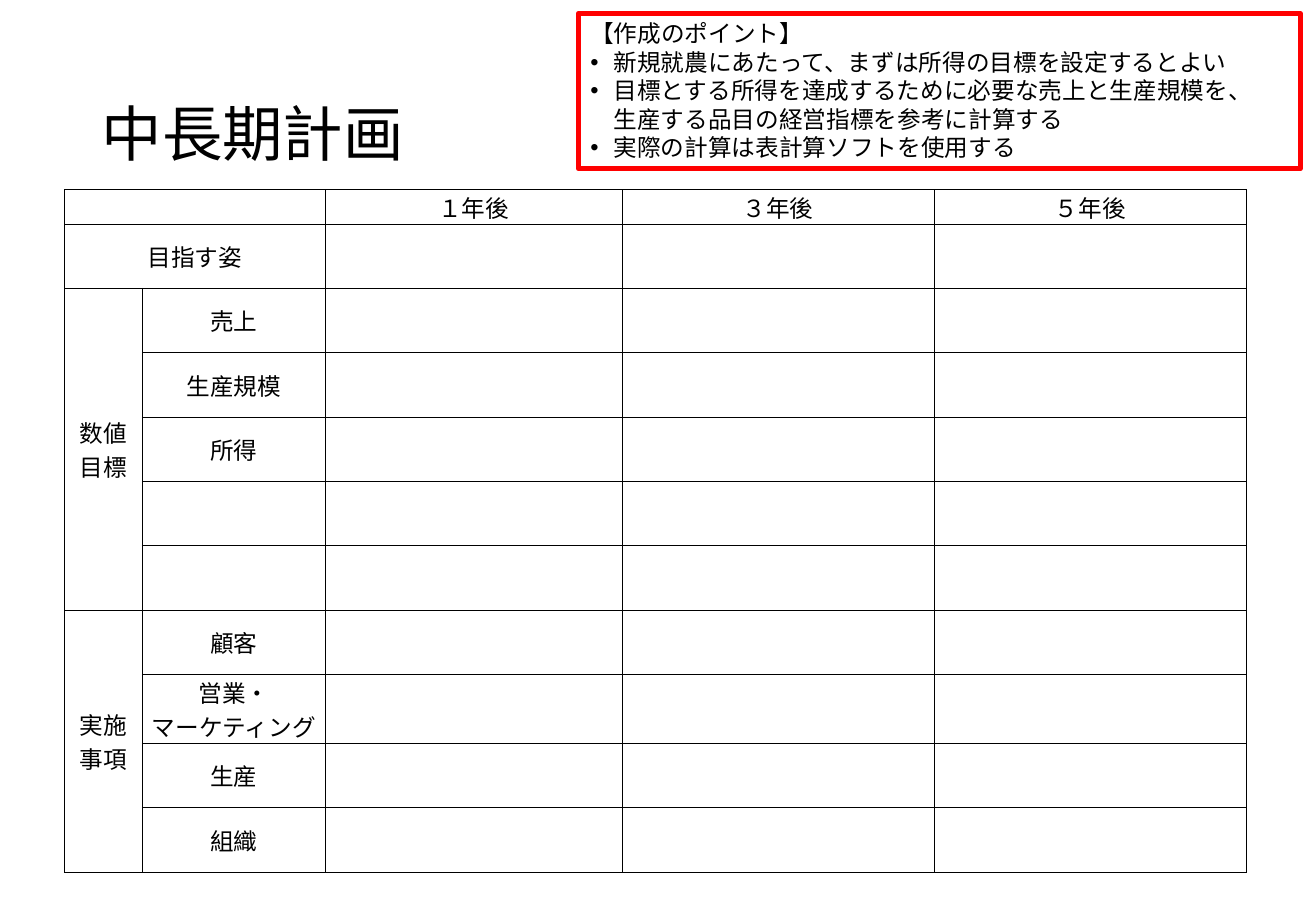
from lxml.etree import SubElement
from pptx import Presentation
from pptx.dml.color import RGBColor
from pptx.enum.shapes import MSO_SHAPE
from pptx.enum.text import MSO_ANCHOR, PP_ALIGN
from pptx.oxml.ns import qn
from pptx.util import Inches, Pt

W, H = 10.83, 7.5
FONT = "Noto Sans CJK JP"
COLORS = {"ink": "000000", "paper": "FFFFFF", "alert": "FF0000"}
COLS = [0.64, 1.51, 2.44, 2.57, 2.57]
ROWS = [0.21] + [0.53] * 10
HEADERS = ["１年後", "３年後", "５年後"]
GROUPS = [
    ("数値\n目標", ["売上", "生産規模", "所得", "", ""]),
    ("実施\n事項", ["顧客", "営業・\nマーケティング", "生産", "組織"]),
]
POINTS = [
    "新規就農にあたって、まずは所得の目標を設定するとよい",
    "目標とする所得を達成するために必要な売上と生産規模を、\n生産する品目の経営指標を参考に計算する",
    "実際の計算は表計算ソフトを使用する",
]


def rgb(name):
    """Return the named colour."""
    return RGBColor.from_string(COLORS[name])


def apply(obj, values):
    """Set attributes of an object from a dict."""
    for name, value in values.items():
        setattr(obj, name, value)


def write(p, text, size, **fmt):
    """Fill a paragraph, sizing its runs, breaks and empty line alike."""
    p.text = text
    apply(p, fmt)
    for r in p.runs:
        apply(r.font, {"size": Pt(size), "name": FONT})
        r.font.color.rgb = rgb("ink")
        SubElement(r.font._element, qn("a:ea"), typeface=FONT)
    marks = [SubElement(br, qn("a:rPr")) for br in p._p.findall(qn("a:br"))]
    if not text:
        marks.append(SubElement(p._p, qn("a:endParaRPr")))
    for mark in marks:
        mark.set("sz", str(int(size * 100)))
        for tag in ("a:latin", "a:ea"):
            SubElement(mark, qn(tag), typeface=FONT)


def add_title(s, box, text):
    """Place the slide title."""
    tf = s.shapes.add_textbox(*map(Inches, box)).text_frame
    apply(tf, {"word_wrap": True, "vertical_anchor": MSO_ANCHOR.MIDDLE})
    write(tf.paragraphs[0], text, 35.8, line_spacing=0.9)


def add_points(s, box, heading, points):
    """Place the framed box of hints with its bullets."""
    sp = s.shapes.add_shape(MSO_SHAPE.RECTANGLE, *map(Inches, box))
    sp.shadow.inherit = False
    sp.fill.solid()
    sp.fill.fore_color.rgb = rgb("paper")
    sp.line.color.rgb = rgb("alert")
    sp.line.width = Pt(3)
    tf = sp.text_frame
    apply(tf, {"word_wrap": True, "vertical_anchor": MSO_ANCHOR.TOP})
    fmt = {"alignment": PP_ALIGN.LEFT, "line_spacing": Pt(16.8)}
    write(tf.paragraphs[0], heading, 14, **fmt)
    for point in points:
        p = tf.add_paragraph()
        write(p, point, 14, **fmt)
        pPr = p._p.get_or_add_pPr()
        pPr.set("marL", str(Inches(0.19)))
        pPr.set("indent", str(-Inches(0.19)))
        SubElement(pPr, qn("a:buFont"), typeface="Arial")
        SubElement(pPr, qn("a:buChar"), char="•")


def style_cell(cell, text):
    """Give a cell its text, white fill and thin black borders."""
    apply(cell, {"margin_left": Inches(0.04), "margin_right": Inches(0.04),
                 "margin_top": 0, "margin_bottom": 0,
                 "vertical_anchor": MSO_ANCHOR.MIDDLE})
    write(cell.text_frame.paragraphs[0], text, 14, alignment=PP_ALIGN.CENTER)
    tcPr = cell._tc.get_or_add_tcPr()
    for side in ("L", "R", "T", "B"):
        ln = SubElement(tcPr, qn(f"a:ln{side}"), w=str(Pt(0.5)))
        fill = SubElement(ln, qn("a:solidFill"))
        SubElement(fill, qn("a:srgbClr"), val=COLORS["ink"])
    cell.fill.solid()
    cell.fill.fore_color.rgb = rgb("paper")


def add_plan(s, box):
    """Place the plan table with its grouped row labels."""
    table = s.shapes.add_table(len(ROWS), len(COLS), *map(Inches, box)).table
    for col, width in zip(table.columns, COLS):
        col.width = Inches(width)
    for row, height in zip(table.rows, ROWS):
        row.height = Inches(height)
    texts = {(0, c): text for c, text in enumerate(HEADERS, 2)}
    texts[1, 0] = "目指す姿"
    spans = [(0, 0, 0, 1), (1, 0, 1, 1)]
    top = 2
    for group, labels in GROUPS:
        texts[top, 0] = group
        texts.update({(r, 1): label for r, label in enumerate(labels, top)})
        spans.append((top, 0, top + len(labels) - 1, 0))
        top += len(labels)
    for r in range(len(ROWS)):
        for c in range(len(COLS)):
            style_cell(table.cell(r, c), texts.get((r, c), ""))
    for r1, c1, r2, c2 in spans:
        table.cell(r1, c1).merge(table.cell(r2, c2))


def main():
    """Build the slide and save it."""
    prs = Presentation()
    apply(prs, {"slide_width": Inches(W), "slide_height": Inches(H)})
    s = prs.slides.add_slide(prs.slide_layouts[6])
    add_plan(s, (0.53, 1.56, sum(COLS), sum(ROWS)))
    add_title(s, (0.74, 0.72, 9.34, 0.82), "中長期計画")
    add_points(s, (4.76, 0.11, 5.94, 1.28), "【作成のポイント】", POINTS)
    prs.save("out.pptx")


if __name__ == "__main__":
    main()
